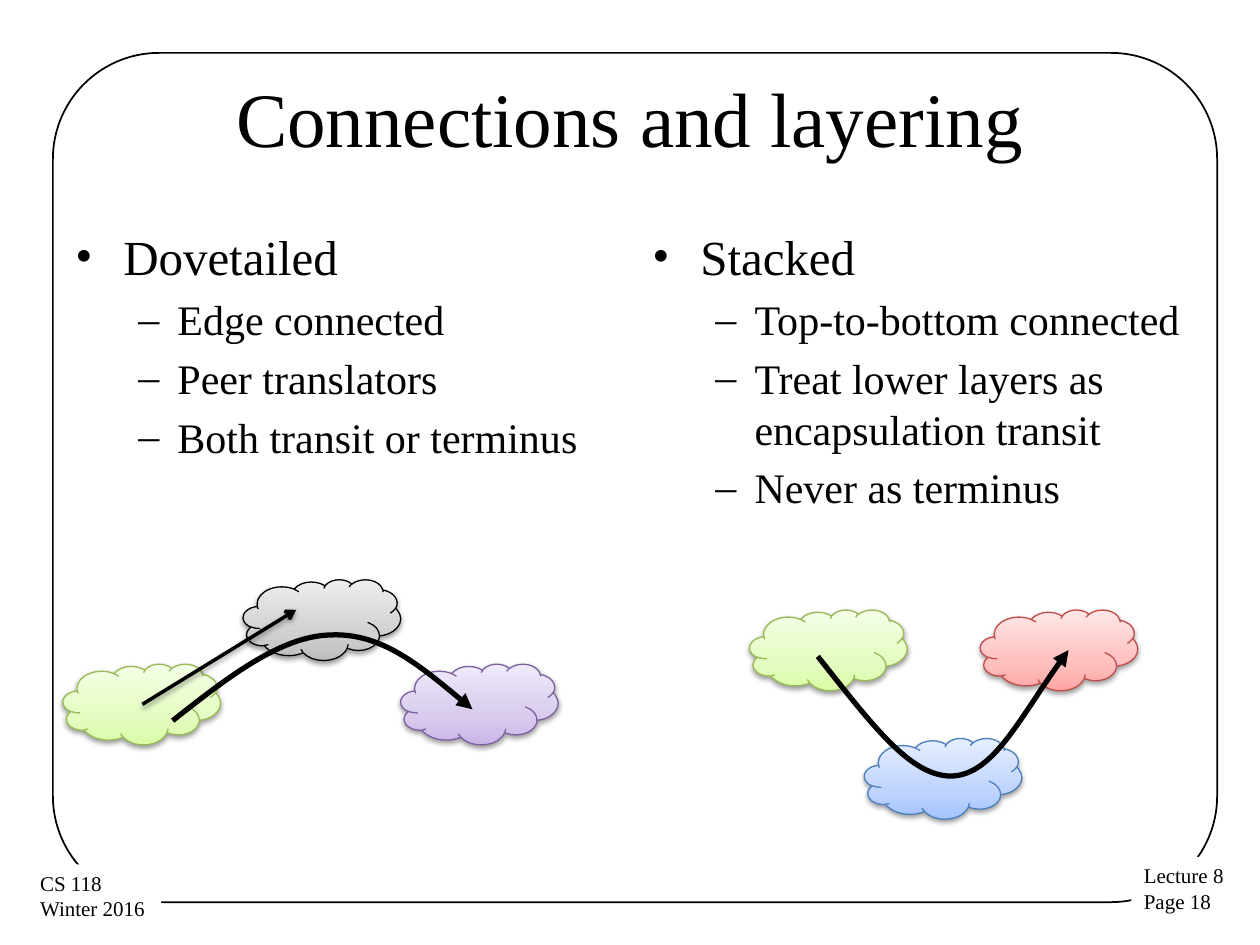
from dataclasses import dataclass

from lxml import etree
from copy import deepcopy
from pptx import Presentation
from pptx.dml.color import RGBColor
from pptx.enum.shapes import MSO_CONNECTOR, MSO_SHAPE
from pptx.enum.text import MSO_ANCHOR, PP_ALIGN
from pptx.oxml.ns import qn
from pptx.util import Inches, Pt

ROUNDED, RECTANGLE, CLOUD = MSO_SHAPE.ROUNDED_RECTANGLE, MSO_SHAPE.RECTANGLE, MSO_SHAPE.CLOUD
STRAIGHT = MSO_CONNECTOR.STRAIGHT
CENTER, LEFT = PP_ALIGN.CENTER, PP_ALIGN.LEFT
MIDDLE, TOP = MSO_ANCHOR.MIDDLE, MSO_ANCHOR.TOP


@dataclass(frozen=True)
class Theme:
    font: str = "Times New Roman"
    ink: str = "000000"
    paper: str = "FFFFFF"
    title_size: int = 44
    heading_size: int = 28
    point_size: int = 24
    footer_size: int = 12
    green: tuple = ("98B955", "DAFDA7", "E4FCC2", "F5FFE7")
    gray: tuple = ("000000", "BDBDBD", "D1D1D1", "EEEEEE")
    purple: tuple = ("7D60A0", "C9B5E8", "D8CBEE", "F0EAF9")
    red: tuple = ("BF4C48", "FFA6A5", "FFC0BF", "FFE7E7")
    blue: tuple = ("4B7EBC", "A4C4FF", "BFD4FF", "E6EEFF")


def color(code):
    return RGBColor.from_string(code)


def inches(*values):
    return [Inches(value) for value in values]


class SlideBuilder:
    def __init__(self, page, theme):
        self.page = page
        self.theme = theme

    def outline(self, shape, code, width):
        shape.line.color.rgb = color(code)
        shape.line.width = Pt(width)

    def arrowhead(self, shape, kind):
        etree.SubElement(shape.line._get_or_add_ln(), qn("a:tailEnd"), type=kind)

    def drop_shadow(self, shape):
        properties = shape._element.spPr
        effects = properties.find(qn("a:effectLst"))
        if effects is None:
            effects = etree.SubElement(properties, qn("a:effectLst"))
        shadow = etree.SubElement(effects, qn("a:outerShdw"), blurRad=str(Pt(3.1)),
                                  dist=str(Pt(1.6)), dir="5400000", rotWithShape="0")
        tint = etree.SubElement(shadow, qn("a:srgbClr"), val=self.theme.ink)
        etree.SubElement(tint, qn("a:alpha"), val="38000")

    def style(self, para, size, align=LEFT):
        para.alignment = align
        para.font.name = self.theme.font
        para.font.size = Pt(size)
        para.font.color.rgb = color(self.theme.ink)

    def frame(self, left, top, width, height):
        box = self.page.shapes.add_shape(ROUNDED, *inches(left, top, width, height))
        box.adjustments[0] = 0.125
        box.shadow.inherit = False
        box.fill.background()
        self.outline(box, self.theme.ink, 1)

    def footer(self, left, top, width, height, lines):
        box = self.page.shapes.add_shape(RECTANGLE, *inches(left, top, width, height))
        box.shadow.inherit = False
        box.fill.solid()
        box.fill.fore_color.rgb = color(self.theme.paper)
        box.line.fill.background()
        text = box.text_frame
        text.word_wrap = False
        text.vertical_anchor = TOP
        text.text = "\n".join(lines)
        for para in text.paragraphs:
            self.style(para, self.theme.footer_size)

    def title(self, left, top, width, height, wording):
        text = self.page.shapes.add_textbox(*inches(left, top, width, height)).text_frame
        text.word_wrap = True
        text.vertical_anchor = MIDDLE
        text.text = wording
        self.style(text.paragraphs[0], self.theme.title_size, CENTER)

    def bullets(self, left, top, width, height, heading, points):
        text = self.page.shapes.add_textbox(*inches(left, top, width, height)).text_frame
        text.word_wrap = True
        text.text = "\n".join([heading, *points])
        for index, para in enumerate(text.paragraphs):
            if index == 0:
                size, mark, margin, hanging = self.theme.heading_size, "•", 0.38, 0.38
            else:
                size, mark, margin, hanging = self.theme.point_size, "–", 0.81, 0.31
                para.level = 1
            para.space_before = Pt(size * 0.2)
            properties = para._p.get_or_add_pPr()
            properties.set("marL", str(Inches(margin)))
            properties.set("indent", str(-Inches(hanging)))
            etree.SubElement(properties, qn("a:buFont"), typeface=self.theme.font)
            etree.SubElement(properties, qn("a:buChar"), char=mark)
            self.style(para, size)

    def cloud(self, left, top, palette):
        line, *shades = palette
        shape = self.page.shapes.add_shape(CLOUD, *inches(left, top, 1.25, 0.64))
        shape.shadow.inherit = False
        shape.fill.gradient()
        shape.fill.gradient_angle = 90
        stop_list = shape._element.spPr.find(qn("a:gradFill")).find(qn("a:gsLst"))
        stop_list.append(deepcopy(stop_list[0]))
        for stop, position, shade in zip(shape.fill.gradient_stops, (0, 0.35, 1), shades):
            stop.position = position
            stop.color.rgb = color(shade)
        self.outline(shape, line, 0.75)
        self.drop_shadow(shape)

    def arrow(self, start, end):
        line = self.page.shapes.add_connector(STRAIGHT, *inches(*start, *end))
        self.outline(line, self.theme.ink, 2)
        self.arrowhead(line, "arrow")
        self.drop_shadow(line)

    def curve(self, start, *points):
        builder = self.page.shapes.build_freeform(*inches(*start), scale=1.0)
        builder.add_line_segments([inches(*point) for point in points], close=False)
        shape = builder.convert_to_shape()
        segments = list(shape._element.iter(qn("a:lnTo")))
        for first in range(0, len(segments), 3):
            bezier = etree.Element(qn("a:cubicBezTo"))
            segments[first].addprevious(bezier)
            for segment in segments[first:first + 3]:
                bezier.append(segment[0])
                segment.getparent().remove(segment)
        shape.shadow.inherit = False
        shape.fill.background()
        self.outline(shape, self.theme.ink, 3)
        self.arrowhead(shape, "triangle")


def main():
    deck = Presentation()
    deck.slide_width, deck.slide_height = inches(10, 7.5)
    theme = Theme()
    slide = SlideBuilder(deck.slides.add_slide(deck.slide_layouts[6]), theme)

    slide.frame(0.42, 0.42, 9.24, 6.74)
    slide.footer(8.98, 6.8, 0.84, 0.51, ["Lecture 8", "Page 18"])
    slide.footer(0.22, 6.86, 1.06, 0.51, ["CS 118", "Winter 2016"])
    slide.title(0.5, 0.3, 9, 1.25, "Connections and layering")

    columns = [
        (0.5, "Dovetailed",
         ["Edge connected", "Peer translators", "Both transit or terminus"]),
        (5.08, "Stacked",
         ["Top-to-bottom connected", "Treat lower layers as encapsulation transit",
          "Never as terminus"]),
    ]
    for left, heading, points in columns:
        slide.bullets(left, 1.75, 4.42, 4.95, heading, points)

    clouds = [
        (0.5, 5.27, theme.green), (1.93, 4.6, theme.gray), (3.18, 5.27, theme.purple),
        (5.95, 4.84, theme.green), (7.78, 4.84, theme.red), (6.86, 5.86, theme.blue),
    ]
    for left, top, palette in clouds:
        slide.cloud(left, top, palette)

    slide.arrow((1.13, 5.59), (2.35, 4.84))
    slide.curve((1.37, 5.72), (1.79, 5.39), (2.22, 5.05), (2.62, 5.04),
                (3.02, 5.02), (3.38, 5.32), (3.75, 5.63))
    slide.curve((6.49, 5.21), (6.92, 5.75), (7.22, 6.16), (7.55, 6.16),
                (7.88, 6.15), (8.11, 5.66), (8.48, 5.16))

    deck.save("out.pptx")


if __name__ == "__main__":
    main()
